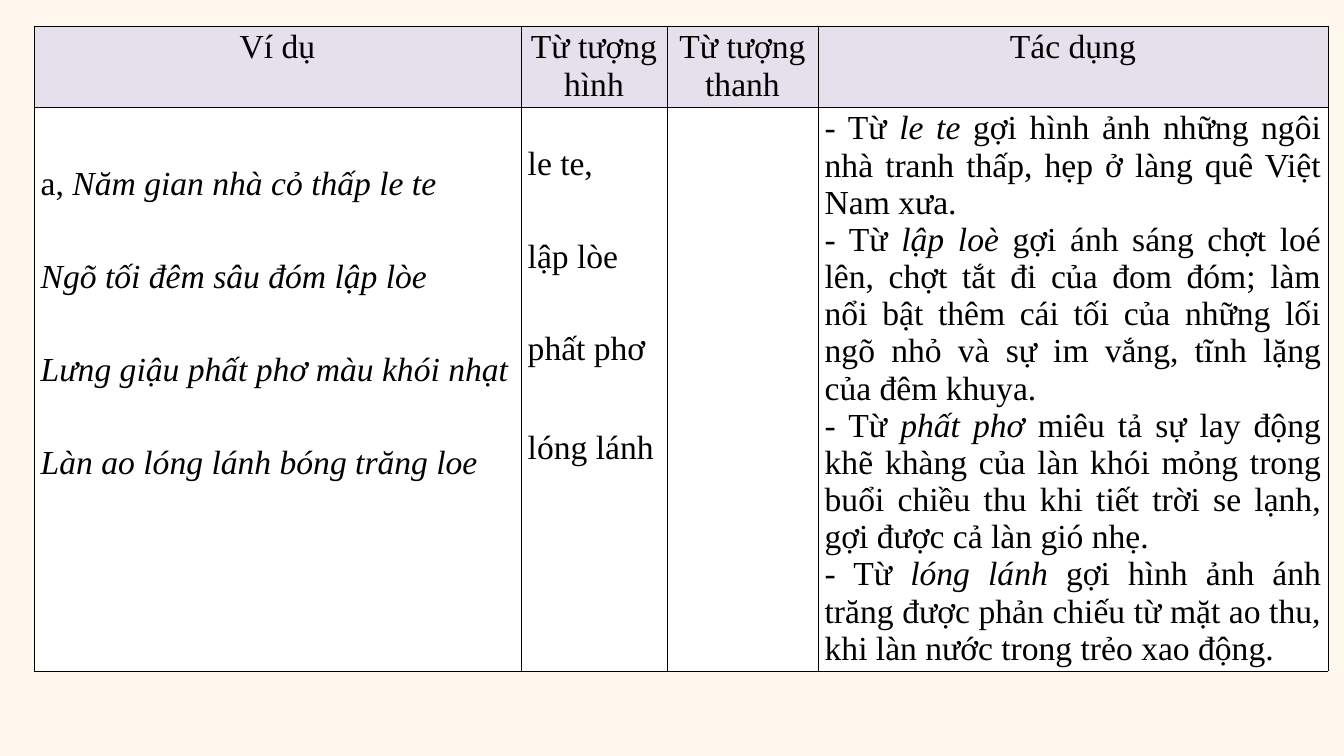
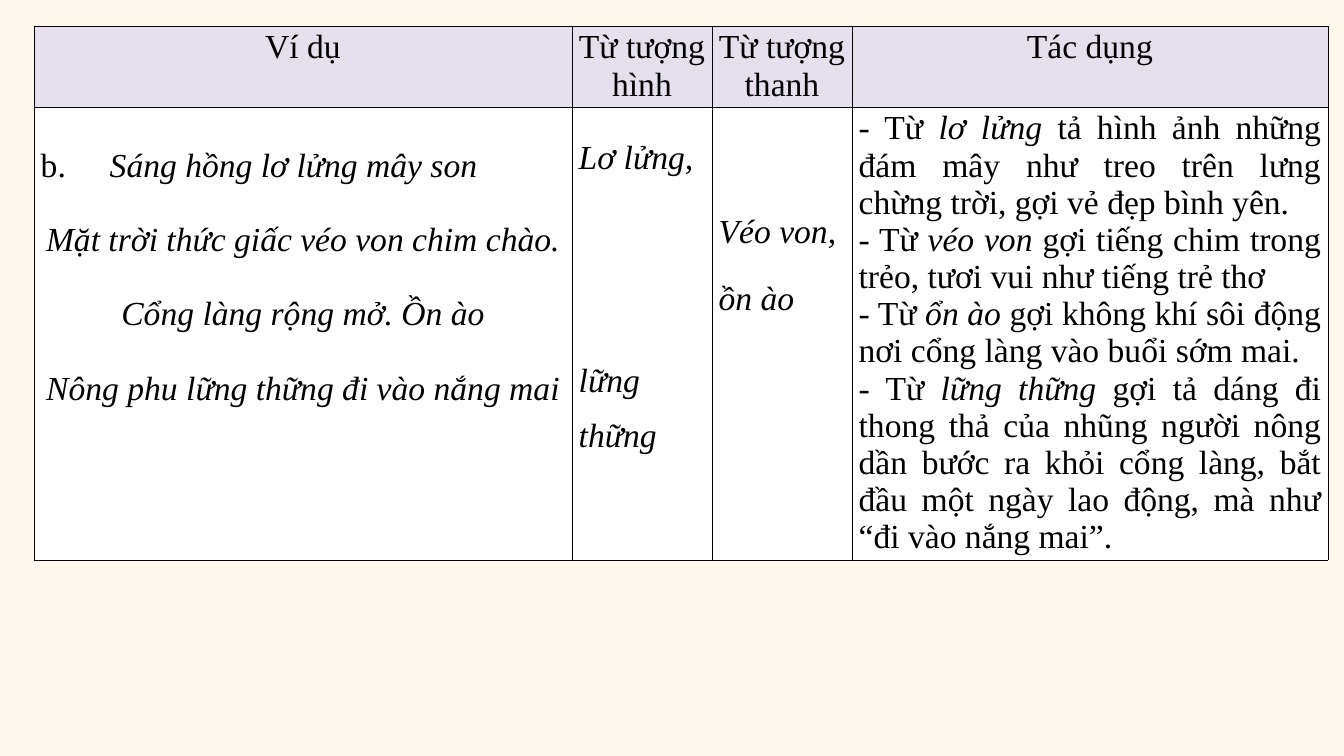
from dataclasses import dataclass

from lxml import etree
from pptx import Presentation
from pptx.dml.color import RGBColor
from pptx.enum.text import PP_ALIGN
from pptx.oxml.ns import qn
from pptx.util import Pt

LEFT, CENTER, JUSTIFY = PP_ALIGN.LEFT, PP_ALIGN.CENTER, PP_ALIGN.JUSTIFY

SCALE = 914400 / 67.2
SLIDE_WIDTH, SLIDE_HEIGHT = 1344, 756
TABLE_LEFT, TABLE_TOP = 34, 26
HEADER_HEIGHT = 81
CELL_TOP = 3

BACKGROUND = "FFF8EE"
HEADER_FILL = "E6E0EC"
BODY_FILL = "FFFFFF"
INK = "000000"
FONT = "Times New Roman"
FONT_SIZE = 36
HEADINGS = ["Ví dụ", "Từ tượng hình", "Từ tượng thanh", "Tác dụng"]


@dataclass
class Line:
    text: str
    align: PP_ALIGN = LEFT
    spacing: float = 1
    before: int = 0
    tab: int = 0


@dataclass
class Content:
    lines: list
    top: int = CELL_TOP


def px(length):
    return round(length * SCALE)


def color(hex_code):
    return RGBColor.from_string(hex_code)


def add_slide(deck):
    slide = deck.slides.add_slide(deck.slide_layouts[6])
    fill = slide.background.fill
    fill.solid()
    fill.fore_color.rgb = color(BACKGROUND)
    return slide


def set_borders(cell):
    properties = cell._tc.get_or_add_tcPr()
    for position, side in enumerate(("lnL", "lnR", "lnT", "lnB")):
        border = etree.Element(qn(f"a:{side}"), w=str(Pt(1)))
        ink_fill = etree.SubElement(border, qn("a:solidFill"))
        etree.SubElement(ink_fill, qn("a:srgbClr"), val=INK)
        properties.insert(position, border)


def add_tab_stop(paragraph, position):
    properties = paragraph._p.get_or_add_pPr()
    stops = etree.SubElement(properties, qn("a:tabLst"))
    etree.SubElement(stops, qn("a:tab"), pos=str(px(position)), algn="l")


def write_line(paragraph, line):
    paragraph.alignment = line.align
    paragraph.line_spacing = float(line.spacing)
    paragraph.space_before = px(line.before)
    if line.tab:
        add_tab_stop(paragraph, line.tab)
    paragraph.font.name = FONT
    paragraph.font.size = Pt(FONT_SIZE)
    paragraph.font.color.rgb = color(INK)
    for index, part in enumerate(line.text.split("*")):
        if part:
            run = paragraph.add_run()
            run.text = part
            run.font.italic = index % 2 == 1


def fill_cell(cell, content, fill_color):
    cell.fill.solid()
    cell.fill.fore_color.rgb = color(fill_color)
    set_borders(cell)
    cell.margin_top = px(content.top)
    frame = cell.text_frame
    for index, line in enumerate(content.lines):
        paragraph = frame.add_paragraph() if index else frame.paragraphs[0]
        write_line(paragraph, line)


def add_word_table(slide, widths, body_height, body):
    heights = [HEADER_HEIGHT, body_height]
    table = slide.shapes.add_table(
        len(heights), len(widths), px(TABLE_LEFT), px(TABLE_TOP),
        px(sum(widths)), px(sum(heights))).table
    table.first_row = False
    table.horz_banding = False
    for column, width in zip(table.columns, widths):
        column.width = px(width)
    for row, height in zip(table.rows, heights):
        row.height = px(height)
    for index, (heading, content) in enumerate(zip(HEADINGS, body)):
        fill_cell(table.cell(0, index), Content([Line(heading, CENTER)]), HEADER_FILL)
        fill_cell(table.cell(1, index), content, BODY_FILL)


def effects(*texts):
    return Content([Line(f"- Từ {text}", JUSTIFY) for text in texts])


def add_autumn_poem(deck):
    verses = [
        "a, *Năm gian nhà cỏ thấp le te*",
        "*Ngõ tối đêm sâu đóm lập lòe*",
        "*Lưng giậu phất phơ màu khói nhạt*",
        "*Làn ao lóng lánh bóng trăng loe*",
    ]
    shape_words = [("le te,", 0), ("lập lòe", 37), ("phất phơ", 37), ("lóng lánh", 43)]
    add_word_table(add_slide(deck), [487, 146, 151, 510], 564, [
        Content([Line(verse, spacing=2.5) for verse in verses]),
        Content([Line(word, spacing=1.5, before=gap) for word, gap in shape_words], top=20),
        Content([]),
        effects(
            "*le te* gợi hình ảnh những ngôi nhà tranh thấp, hẹp ở làng quê Việt Nam xưa.",
            "*lập loè* gợi ánh sáng chợt loé lên, chợt tắt đi của đom đóm; làm nổi bật thêm "
            "cái tối của những lối ngõ nhỏ và sự im vắng, tĩnh lặng của đêm khuya.",
            "*phất phơ* miêu tả sự lay động khẽ khàng của làn khói mỏng trong buổi chiều thu "
            "khi tiết trời se lạnh, gợi được cả làn gió nhẹ.",
            "*lóng lánh* gợi hình ảnh ánh trăng được phản chiếu từ mặt ao thu, "
            "khi làn nước trong trẻo xao động."),
    ])


def add_morning_poem(deck):
    verses = [
        "*Mặt trời thức giấc véo von chim chào.*",
        "*Cổng làng rộng mở. Ồn ào*",
        "*Nông phu lững thững đi vào nắng mai*",
    ]
    opening = Line("b.\t*Sáng hồng lơ lửng mây son*", spacing=2, tab=69)
    add_word_table(add_slide(deck), [538, 140, 140, 476], 453, [
        Content([opening] + [Line(verse, CENTER, 2) for verse in verses]),
        Content([Line("*Lơ lửng,*", spacing=1.5),
                 Line("*lững thững*", spacing=1.5, before=167)], top=14),
        Content([Line("*Véo von,*"), Line("*ồn ào*", before=29)], top=107),
        effects(
            "*lơ lửng* tả hình ảnh những đám mây như treo trên lưng chừng trời, "
            "gợi vẻ đẹp bình yên.",
            "*véo von* gợi tiếng chim trong trẻo, tươi vui như tiếng trẻ thơ",
            "*ổn ào* gợi không khí sôi động nơi cổng làng vào buổi sớm mai.",
            "*lững thững* gợi tả dáng đi thong thả của nhũng người nông dần bước ra khỏi "
            "cổng làng, bắt đầu một ngày lao động, mà như “đi vào nắng mai”."),
    ])


def main():
    deck = Presentation()
    deck.slide_width, deck.slide_height = px(SLIDE_WIDTH), px(SLIDE_HEIGHT)
    add_autumn_poem(deck)
    add_morning_poem(deck)
    deck.save("out.pptx")


if __name__ == "__main__":
    main()
